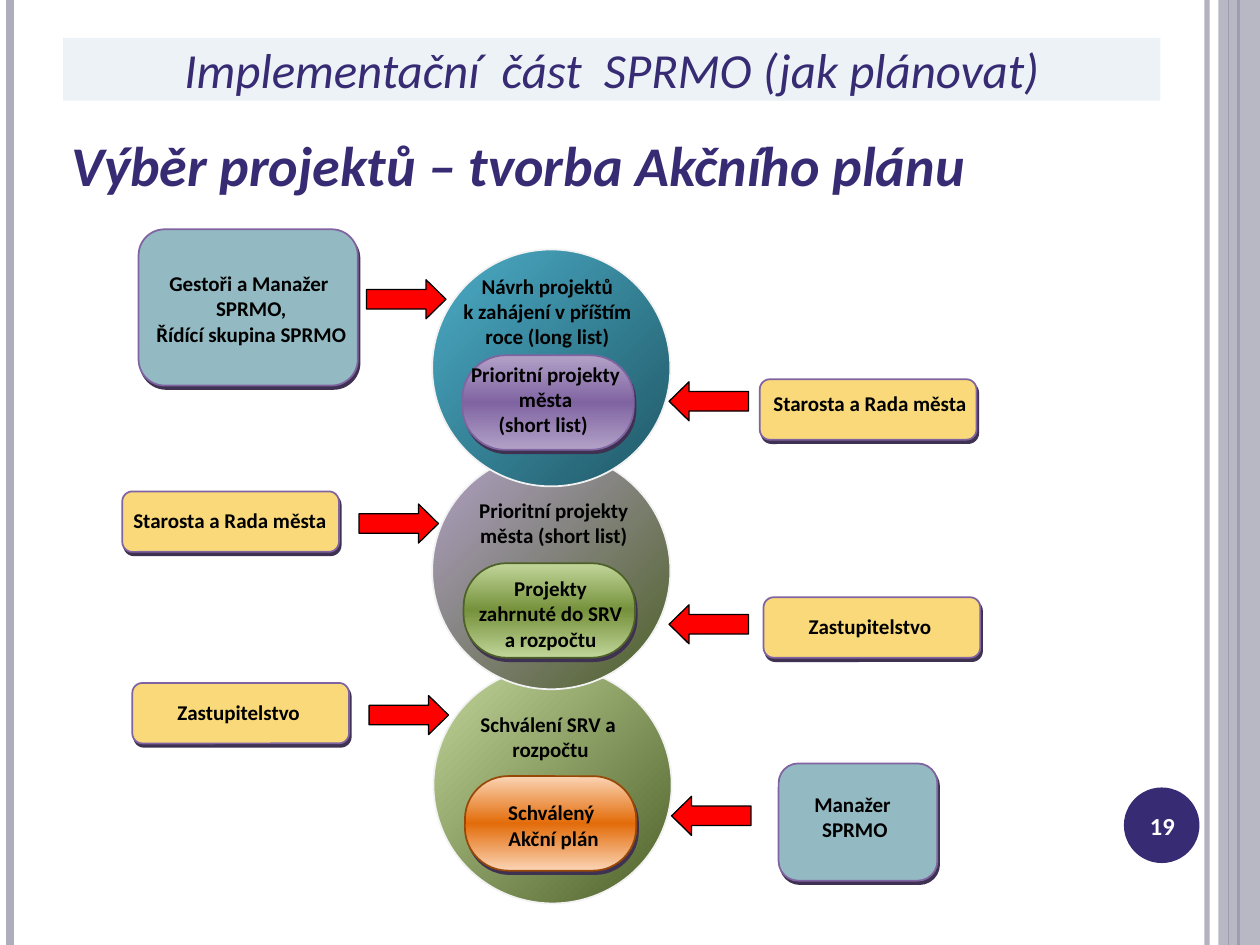
from lxml.etree import SubElement
from pptx import Presentation
from pptx.dml.color import RGBColor
from pptx.enum.shapes import MSO_CONNECTOR, MSO_SHAPE
from pptx.enum.text import MSO_ANCHOR, PP_ALIGN
from pptx.oxml.ns import qn
from pptx.util import Inches, Pt

THEME = {
    "font": "Calibri", "title": 28, "heading": 32, "label": 12, "number": 14,
    "navy": "372C74", "stripe": "AEADBC", "banner": "DEE9F0", "white": "FFFFFF",
    "black": "000000", "red": "FF0000", "teal": "93B9C2", "yellow": "F9D979",
    "purple": "8064A2", "shadow": "3F3151", "rim": "F2F2F2",
}

TITLE = "Implementační  část  SPRMO (jak plánovat)"
HEADING = "Výběr projektů – tvorba Akčního plánu"
PAGE_NUMBER = "19"

RULES = [(9.58, "stripe", 3, 93), (0.08, "stripe", 4.5, 100),
         (9.83, "navy", 1.5, 100), (9.75, "navy", 0.75, 100)]

CIRCLE, PILL, ARROW = (1.89, 1.88), (1.36, 0.75), (0.31, 0.63)
WIDE = (1.72, 0.48)

STAGES = [
    {"circle": (3.44, 5.29), "colors": ["C2D69B", "4E6128"],
     "text": ["Schválení SRV a ", "rozpočtu"], "text_at": (3.62, 5.6, 1.5, 0.52),
     "pill": (3.69, 6.16), "pill_colors": ["FBD4B4", "E36C0A", "FBD4B4"], "pill_line": "974706",
     "pill_text": ["Schválený", " Akční plán"], "pill_text_at": (3.7, 6.3, 1.35, 0.6)},
    {"circle": (3.43, 3.59), "colors": ["B2A1C7", "4E6128"],
     "text": ["Prioritní projekty města (short list)"], "text_at": (3.6, 3.9, 1.59, 0.52),
     "pill": (3.68, 4.47), "pill_colors": ["C2D69B", "76923C", "C2D69B"], "pill_line": "4E6128",
     "pill_text": ["Projekty zahrnuté do SRV a rozpočtu"], "pill_text_at": (3.7, 4.52, 1.34, 0.7)},
    {"circle": (3.43, 1.98), "colors": ["4BACC6", "205867"],
     "text": ["Návrh projektů", "k zahájení v\u00a0příštím roce (long list)"],
     "text_at": (3.43, 2.12, 1.83, 0.75),
     "pill": (3.67, 2.82), "pill_colors": ["B2A1C7", "8064A2", "B2A1C7"], "pill_line": "8064A2",
     "pill_text": ["Prioritní projekty města", "(short list) "], "pill_text_at": (3.64, 2.82, 1.38, 0.75)},
]

ACTORS = [
    (["Zastupitelstvo"], (1.05, 5.42, *WIDE), (0.98, 5.5, 1.83, 0.33), "yellow"),
    (["Manažer ", "SPRMO"], (6.18, 6.06, 1.26, 0.93), (5.77, 6.23, 2.03, 0.59), "teal"),
    (["Zastupitelstvo"], (6.06, 4.74, *WIDE), (5.99, 4.82, 1.83, 0.33), "yellow"),
    (["Starosta a Rada města"], (0.97, 3.9, *WIDE), (0.91, 3.98, 1.83, 0.33), "yellow"),
    (["Gestoři a Manažer ", "SPRMO,", "Řídící skupina SPRMO"],
     (1.1, 1.82, 1.74, 1.24), (0.98, 2.1, 2.03, 0.8), "teal"),
    (["Starosta a Rada města"], (6.03, 3.01, *WIDE), (5.99, 3.05, 1.83, 0.33), "yellow"),
]

POINT_RIGHT, POINT_LEFT = 270, 90
ARROWS = [(3.09, 5.36, POINT_RIGHT), (5.49, 6.16, POINT_LEFT), (5.47, 4.64, POINT_LEFT),
          (3.01, 3.84, POINT_RIGHT), (3.07, 2.06, POINT_RIGHT), (5.47, 2.87, POINT_LEFT)]


def rgb(name):
    return RGBColor.from_string(THEME.get(name, name))


def set_alpha(element, percent):
    color = next(element.iter(qn("a:srgbClr")))
    SubElement(color, qn("a:alpha"), val=str(percent * 1000))


def add_shape(page, kind, place, fill=None, line=None, width=1.0, adjust=()):
    shape = page.shapes.add_shape(kind, *map(Inches, place))
    shape.shadow.inherit = False
    for index, value in enumerate(adjust):
        shape.adjustments[index] = value
    if fill:
        shape.fill.solid()
        shape.fill.fore_color.rgb = rgb(fill)
    if line:
        shape.line.color.rgb = rgb(line)
        shape.line.width = Pt(width)
    else:
        shape.line.fill.background()
    return shape


def add_gradient(shape, colors, angle):
    shape.fill.gradient()
    shape.fill.gradient_angle = 360 - angle
    stops = next(shape._element.spPr.iter(qn("a:gsLst")))
    for stop in list(stops):
        stops.remove(stop)
    for index, color in enumerate(colors):
        position = 100000 * index // (len(colors) - 1)
        stop = SubElement(stops, qn("a:gs"), pos=str(position))
        SubElement(stop, qn("a:srgbClr"), val=color)


def add_hard_shadow(shape):
    effects = shape._element.spPr.find(qn("a:effectLst"))
    shadow = SubElement(effects, qn("a:outerShdw"), blurRad="0", dist=str(Pt(2.2)),
                        dir=str(63 * 60000), algn="ctr", rotWithShape="0")
    SubElement(shadow, qn("a:srgbClr"), val=THEME["shadow"])


def write(shape, lines, size, color="black", bold=True, italic=False,
          align=PP_ALIGN.CENTER, anchor=MSO_ANCHOR.TOP):
    frame = shape.text_frame
    frame.word_wrap = True
    frame.vertical_anchor = anchor
    frame.text = "\n".join(lines)
    for para in frame.paragraphs:
        para.alignment = align
        para.font.name = THEME["font"]
        para.font.size = Pt(THEME[size])
        para.font.bold = bold
        para.font.italic = italic
        para.font.color.rgb = rgb(color)


def add_text(page, place, lines, size="label", **style):
    write(page.shapes.add_textbox(*map(Inches, place)), lines, size, **style)


def add_rule(page, x, color, width, alpha):
    rule = page.shapes.add_connector(MSO_CONNECTOR.STRAIGHT, Inches(x), 0, Inches(x), Inches(7.5))
    rule.line.color.rgb = rgb(color)
    rule.line.width = Pt(width)
    properties = rule._element.spPr
    if alpha < 100:
        set_alpha(properties, alpha)
    SubElement(properties, qn("a:effectLst"))


def add_frame(page):
    for rule in RULES:
        add_rule(page, *rule)
    band = add_shape(page, MSO_SHAPE.RECTANGLE, (9.67, 0, 0.33, 7.5), "stripe")
    set_alpha(band._element.spPr, 87)
    add_shape(page, MSO_SHAPE.OVAL, (8.92, 6.25, 0.6, 0.6), "navy")
    add_text(page, (0.47, 0.99, 8.43, 6.38), [HEADING], "heading", color="navy",
             italic=True, align=PP_ALIGN.LEFT)
    add_text(page, (8.89, 6.27, 0.67, 0.57), [PAGE_NUMBER], "number", color="white",
             anchor=MSO_ANCHOR.MIDDLE)
    banner = add_shape(page, MSO_SHAPE.RECTANGLE, (0.5, 0.3, 8.71, 0.5), "banner")
    set_alpha(banner._element.spPr, 56)
    write(banner, [TITLE], "title", "navy", bold=False, italic=True, anchor=MSO_ANCHOR.MIDDLE)


def add_stage(page, stage):
    circle = add_shape(page, MSO_SHAPE.OVAL, (*stage["circle"], *CIRCLE), line="rim")
    add_gradient(circle, stage["colors"], 45)
    add_text(page, stage["text_at"], stage["text"])
    pill = add_shape(page, MSO_SHAPE.ROUNDED_RECTANGLE, (*stage["pill"], *PILL),
                     line=stage["pill_line"], adjust=[0.456])
    add_gradient(pill, stage["pill_colors"], 90)
    add_hard_shadow(pill)
    add_text(page, stage["pill_text_at"], stage["pill_text"])


def main():
    deck = Presentation()
    deck.slide_width, deck.slide_height = Inches(10), Inches(7.5)
    page = deck.slides.add_slide(deck.slide_layouts[6])
    add_frame(page)
    for stage in STAGES:
        add_stage(page, stage)
    for lines, place, text_at, color in ACTORS:
        box = add_shape(page, MSO_SHAPE.ROUNDED_RECTANGLE, place, color, "purple")
        add_hard_shadow(box)
        add_text(page, text_at, lines)
    for x, y, rotation in ARROWS:
        arrow = add_shape(page, MSO_SHAPE.DOWN_ARROW, (x, y, *ARROW), "red", "black", 0.75,
                          [0.5, 0.51])
        arrow.rotation = rotation
    deck.save("out.pptx")


if __name__ == "__main__":
    main()
